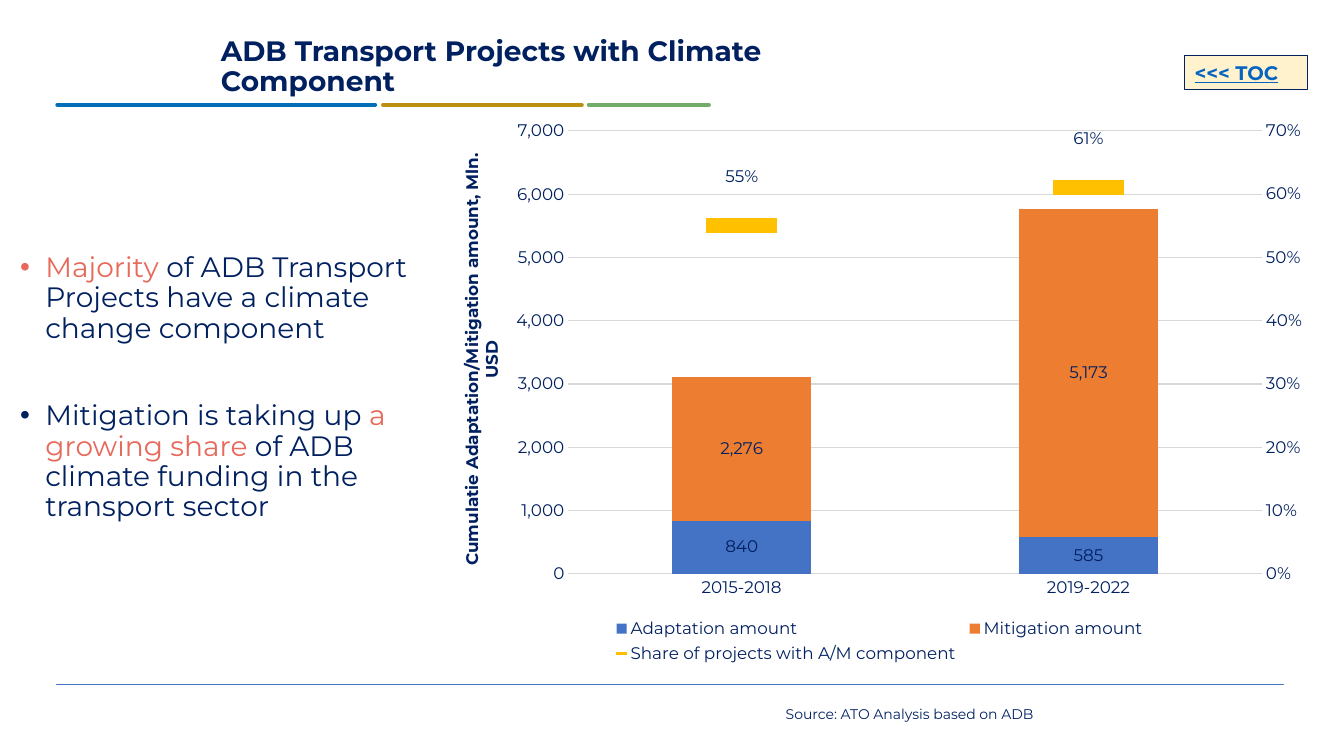
from copy import deepcopy

from lxml import etree
from pptx import Presentation
from pptx import util as u
from pptx.chart.axis import ValueAxis
from pptx.chart.data import CategoryChartData
from pptx.dml.color import RGBColor
from pptx.enum import chart as charts
from pptx.enum import shapes, text
from pptx.oxml import parse_xml
from pptx.oxml.ns import nsdecls, qn

NAVY, CORAL, GREY = "002060", "E6695A", "D9D9D9"
FONT = "Montserrat"


def color(value):
    return RGBColor.from_string(value)


class SlideBuilder:
    def __init__(self, page):
        self.page = page

    def style(self, font, size, ink=NAVY, bold=False):
        font.name, font.size, font.bold = FONT, u.Pt(size), bold
        font.color.rgb = color(ink)

    def place(self, shape, left, top, width, height):
        shape.left, shape.top = u.Inches(left), u.Inches(top)
        shape.width, shape.height = u.Inches(width), u.Inches(height)

    def fill_text(self, box, paragraphs, size, bold=False, underline=None, align=text.PP_ALIGN.LEFT,
                  bullet=False, spacing=1.0, gap=0):
        frame = box.text_frame
        frame.word_wrap = True
        frame.auto_size = text.MSO_AUTO_SIZE.NONE
        frame.vertical_anchor = text.MSO_ANCHOR.MIDDLE
        for index, spans in enumerate(paragraphs):
            para = frame.add_paragraph() if index else frame.paragraphs[0]
            props = para._p.get_or_add_pPr()
            indent = u.Inches(0.25) if bullet else 0
            props.set("marL", str(indent))
            props.set("indent", str(-indent))
            tag = etree.SubElement(props, qn("a:buChar" if bullet else "a:buNone"))
            if bullet:
                tag.set("char", "•")
            para.alignment = align
            para.line_spacing = spacing
            para.space_before = u.Pt(gap if index else 0)
            for words, ink in spans:
                span = para.add_run()
                span.text = words
                self.style(span.font, size, ink, bold)
                span.font.underline = underline

    def placeholder(self, index, area, paragraphs, size, **options):
        box = self.page.placeholders[index]
        self.place(box, *area)
        self.fill_text(box, paragraphs, size, **options)

    def rule(self, start, end, top, ink, weight):
        line = self.page.shapes.add_connector(
            shapes.MSO_CONNECTOR.STRAIGHT, u.Inches(start), u.Inches(top), u.Inches(end), u.Inches(top))
        line.line.color.rgb = color(ink)
        line.line.width = u.Pt(weight)
        line.line._get_or_add_ln().set("cap", "rnd")
        etree.SubElement(line._element.spPr, qn("a:effectLst"))

    def button(self, area, words):
        box = self.page.shapes.add_shape(shapes.MSO_SHAPE.RECTANGLE, *map(u.Inches, area))
        box.shadow.inherit = False
        box.fill.solid()
        box.fill.fore_color.rgb = color("FFF2CC")
        box.line.color.rgb = color(NAVY)
        box.line.width = u.Pt(0.75)
        self.fill_text(box, [[(words, "0563C1")]], 14, bold=True, underline=True)

    def layout(self, parent, after, **values):
        old = parent.find(qn("c:layout"))
        if old is not None:
            parent.remove(old)
        inner = '<c:layoutTarget val="inner"/>' if parent.tag == qn("c:plotArea") else ""
        modes = "".join(f'<c:{key}Mode val="edge"/>' for key in "xy")
        sizes = "".join(f'<c:{key} val="{value}"/>' for key, value in values.items())
        node = parse_xml(f'<c:layout {nsdecls("c")}><c:manualLayout>{inner}{modes}{sizes}'
                         '</c:manualLayout></c:layout>')
        if after is None:
            parent.insert(0, node)
        else:
            parent.find(qn(after)).addnext(node)

    def axis(self, axis, number_format=None):
        axis.major_tick_mark = axis.minor_tick_mark = charts.XL_TICK_MARK.NONE
        self.style(axis.tick_labels.font, 12)
        if number_format:
            axis.format.line.fill.background()
            axis.tick_labels.number_format = number_format
            axis.tick_labels.number_format_is_linked = False
        else:
            axis.format.line.color.rgb = color(GREY)
            axis.format.line.width = u.Pt(0.75)

    def labels(self, series, number_format, position):
        labels = series.data_labels
        labels.show_value = True
        labels.number_format = number_format
        labels.number_format_is_linked = False
        labels.position = position
        self.style(labels.font, 12)

    def move_to_right_axis(self, chart):
        area = chart._chartSpace.chart.plotArea
        bars = area.find(qn("c:barChart"))
        share = bars.findall(qn("c:ser"))[-1]
        for flag in share.findall(qn("c:invertIfNegative")):
            share.remove(flag)
        lines = parse_xml(
            f'<c:lineChart {nsdecls("c")}><c:grouping val="standard"/><c:varyColors val="0"/>'
            '<c:marker val="1"/><c:axId val="5001"/><c:axId val="5002"/></c:lineChart>')
        lines.insert(2, share)
        bars.addnext(lines)
        values = area.find(qn("c:valAx"))
        previous = values
        for source, own, other, side in ((values, "5002", "5001", "r"),
                                         (area.find(qn("c:catAx")), "5001", "5002", "b")):
            twin = deepcopy(source)
            for tag, value in (("axId", own), ("crossAx", other), ("axPos", side)):
                twin.find(qn(f"c:{tag}")).set("val", value)
            previous.addnext(twin)
            previous = twin
        ValueAxis(previous).visible = False
        right = ValueAxis(values.getnext())
        right._element.find(qn("c:crosses")).set("val", "max")
        right.has_major_gridlines = right.has_title = False
        right.minimum_scale, right.maximum_scale, right.major_unit = 0, 0.7, 0.1
        self.axis(right, "0%")
        return chart.plots[1].series[0]

    def combined_chart(self, area, categories, series, axis_title):
        data = CategoryChartData()
        data.categories = categories
        for name, values in series:
            data.add_series(name, values)
        chart = self.page.shapes.add_chart(
            charts.XL_CHART_TYPE.COLUMN_STACKED, *map(u.Inches, area), data).chart
        self.style(chart.font, 12)
        chart.has_title = False
        self.axis(chart.category_axis)
        left = chart.value_axis
        self.axis(left, "#,##0")
        left.minimum_scale, left.maximum_scale, left.major_unit = 0, 7000, 1000
        left.major_gridlines.format.line.color.rgb = color(GREY)
        left.major_gridlines.format.line.width = u.Pt(0.75)

        share = self.move_to_right_axis(chart)
        share.smooth = False
        share.format.line.fill.background()
        share.marker.style = charts.XL_MARKER_STYLE.DASH
        share.marker.size = 50
        share.marker.format.fill.solid()
        share.marker.format.fill.fore_color.rgb = color("FFC000")
        share.marker.format.line.fill.background()
        self.labels(share, "0%", charts.XL_LABEL_POSITION.ABOVE)

        columns = chart.plots[0]
        columns.gap_width, columns.overlap = 150, 100
        columns.vary_by_categories = False
        for amount, ink in zip(columns.series, ("4472C4", "ED7D31")):
            amount.format.fill.solid()
            amount.format.fill.fore_color.rgb = color(ink)
            self.labels(amount, "#,##0", charts.XL_LABEL_POSITION.CENTER)

        span = left.axis_title.text_frame.paragraphs[0].add_run()
        span.text = axis_title
        self.style(span.font, 12, bold=True)
        chart.has_legend = True
        chart.legend.position = charts.XL_LEGEND_POSITION.BOTTOM
        chart.legend.include_in_layout = False
        self.style(chart.legend.font, 12)
        self.layout(chart._chartSpace.chart.plotArea, None, x=0.155, y=0.036, w=0.78, h=0.793)
        self.layout(chart.legend._element, "c:legendPos", x=0.2, y=0.9, w=0.61, h=0.1)
        self.layout(left.axis_title._element, "c:tx", x=0.03, y=0.07)


def main():
    deck = Presentation()
    deck.slide_width, deck.slide_height = u.Inches(13.33), u.Inches(7.5)
    slide = SlideBuilder(deck.slides.add_slide(deck.slide_layouts[3]))
    slide.rule(0.56, 12.73, 6.79, "4472C4", 0.5)
    for start, end, ink in ((0.57, 3.72, "006EB7"), (3.8, 5.77, "BB8F10"), (5.84, 7.03, "71AD68")):
        slide.rule(start, end, 1.04, ink, 3)
    slide.placeholder(0, (2.09, 0.24, 7.14, 0.86),
                      [[("ADB Transport Projects with Climate Component", NAVY)]],
                      20, bold=True, spacing=0.9)
    slide.placeholder(1, (0.1, 1.25, 4.26, 5.2), [
        [("Majority ", CORAL), ("of ADB Transport Projects have a climate change component", NAVY)],
        [("Mitigation is taking up", NAVY), (" a growing share", CORAL),
         (" of ADB climate funding in the transport sector", NAVY)],
    ], 20, bullet=True, spacing=0.9, gap=41)
    slide.placeholder(2, (6.77, 6.88, 4.5, 0.4), [[("Source: ATO Analysis based on ADB", NAVY)]],
                      10, align=text.PP_ALIGN.CENTER)
    slide.combined_chart((4.27, 1.1, 8.82, 5.54), ("2015-2018", "2019-2022"), (
        ("Adaptation amount", (840, 585)),
        ("Mitigation amount", (2276, 5173)),
        ("Share of projects with A/M component", (0.55, 0.61)),
    ), "Cumulatie Adaptation/Mitigation amount, Mln. USD")
    slide.button((11.75, 0.55, 1.22, 0.34), "<<< TOC")
    deck.save("out.pptx")


if __name__ == "__main__":
    main()
